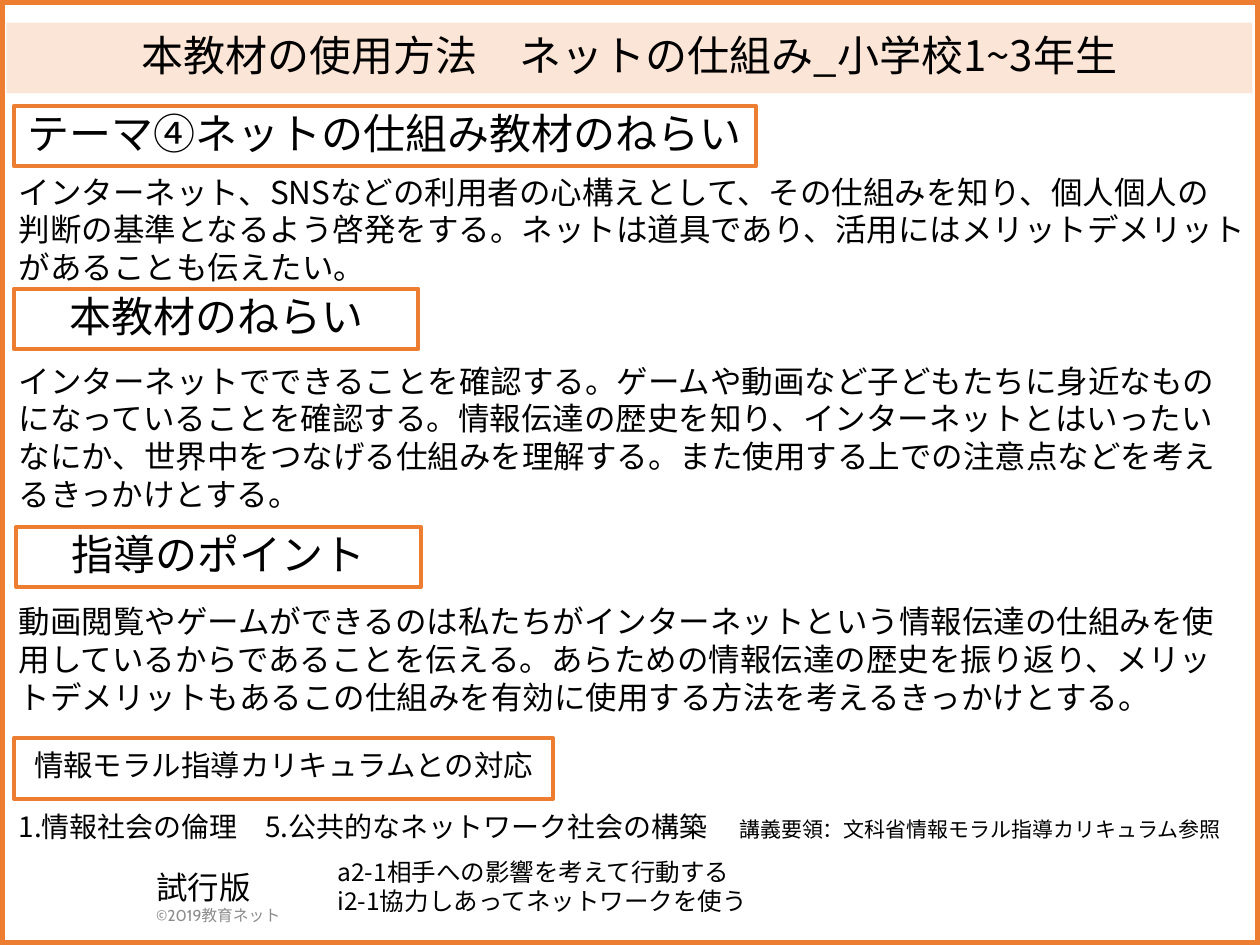
"""Build the lesson guide slide on how the internet works for grades 1 to 3."""
from typing import NamedTuple

from lxml import etree
from pptx import Presentation
from pptx import util as u
from pptx.dml.color import RGBColor
from pptx.enum import shapes, text
from pptx.oxml import ns

COLORS = {"accent": "ED7D31", "band": "FBE5D6", "ink": "000000", "credit": "8C8C8C"}
JAPANESE = "Noto Sans CJK JP"
LEFT = 0.05
HEADING_HEIGHT = 0.48


class Run(NamedTuple):
    """A stretch of text in one format."""
    words: str
    size: float = 18
    color: str = "ink"
    font: str = JAPANESE


class Heading(NamedTuple):
    """An outlined section heading."""
    words: str
    left: float
    top: float
    width: float
    size: float = 24
    spacing: float = 0.9


class Passage(NamedTuple):
    """A text box holding paragraphs of runs."""
    left: float
    top: float
    width: float
    height: float
    paragraphs: list[list[Run]]
    wrap: bool = True


HEADINGS = [
    Heading("テーマ④ネットの仕組み教材のねらい", 0.11, 0.84, 5.89),
    Heading("本教材のねらい", 0.11, 2.29, 3.21),
    Heading("指導のポイント", 0.13, 4.18, 3.21),
    Heading("情報モラル指導カリキュラムとの対応", 0.11, 5.86, 4.28, 16.8, 0.7),
]

PASSAGES = [
    Passage(1.14, 6.84, 2.89, 0.57, [
        [Run("試行版", font="Cabin")],
        [Run("©2019教育ネット", 9, "credit", "Cabin")],
    ]),
    Passage(LEFT, 1.32, 10.05, 1.01, [
        [Run("インターネット、SNSなどの利用者の心構えとして、その仕組みを知り、個人個人の")],
        [Run("判断の基準となるよう啓発をする。ネットは道具であり、活用にはメリットデメリット")],
        [Run("があることも伝えたい。")],
    ], wrap=False),
    Passage(LEFT, 2.82, 9.75, 1.31, [[Run(
        "インターネットでできることを確認する。ゲームや動画など子どもたちに身近なもの"
        "になっていることを確認する。情報伝達の歴史を知り、インターネットとはいったい"
        "なにか、世界中をつなげる仕組みを理解する。また使用する上での注意点などを考え"
        "るきっかけとする。")]]),
    Passage(LEFT, 4.73, 9.89, 1.01, [[Run(
        "動画閲覧やゲームができるのは私たちがインターネットという情報伝達の仕組みを使"
        "用しているからであることを伝える。あらための情報伝達の歴史を振り返り、メリッ"
        "トデメリットもあるこの仕組みを有効に使用する方法を考えるきっかけとする。")]]),
    Passage(2.58, 6.75, 9.57, 0.57, [
        [Run("a2-1相手への影響を考えて行動する", 14)],
        [Run("i2-1協力しあってネットワークを使う", 14)],
    ]),
    Passage(LEFT, 6.35, 10.47, 0.4, [[
        Run("1.情報社会の倫理\u30005.公共的なネットワーク社会の構築".replace("\u3000", "　"), 16),
        Run("　"),
        Run("講義要領：文科省情報モラル指導カリキュラム参照", 12),
    ]]),
]


def rgb(name: str) -> RGBColor:
    """Look up a palette colour."""
    return RGBColor.from_string(COLORS[name])


def apply(target, values: dict) -> None:
    """Set each format value on the target."""
    for key, value in values.items():
        setattr(target, key, value)


def add_run(paragraph, part: Run) -> None:
    """Append a formatted run, with its East Asian font, to a paragraph."""
    run = paragraph.add_run()
    run.text = part.words
    apply(run.font, {"name": part.font, "size": u.Pt(part.size), "bold": False})
    run.font.color.rgb = rgb(part.color)
    east_asian = etree.Element(ns.qn("a:ea"), typeface=JAPANESE)
    run.font._element.find(ns.qn("a:latin")).addnext(east_asian)


def write_heading(frame, part: Run, spacing: float) -> None:
    """Write one centred line in the middle of a shape."""
    apply(frame, {"word_wrap": True, "auto_size": text.MSO_AUTO_SIZE.NONE,
                  "vertical_anchor": text.MSO_ANCHOR.MIDDLE})
    paragraph = frame.paragraphs[0]
    apply(paragraph, {"alignment": text.PP_ALIGN.CENTER, "line_spacing": spacing})
    add_run(paragraph, part)


def add_outline(slide, left: float, top: float, width: float, height: float, weight: float):
    """Add an unfilled rectangle with an accent outline."""
    box = slide.shapes.add_shape(
        shapes.MSO_SHAPE.RECTANGLE, *map(u.Inches, (left, top, width, height)))
    box.shadow.inherit = False
    box.fill.background()
    box.line.color.rgb = rgb("accent")
    box.line.width = u.Pt(weight)
    return box


def add_heading(slide, heading: Heading) -> None:
    """Add an outlined section heading."""
    box = add_outline(slide, heading.left, heading.top, heading.width, HEADING_HEIGHT, 2.25)
    write_heading(box.text_frame, Run(heading.words, heading.size), heading.spacing)


def add_passage(slide, passage: Passage) -> None:
    """Add a text box with its paragraphs."""
    frame = slide.shapes.add_textbox(*map(u.Inches, passage[:4])).text_frame
    apply(frame, {"word_wrap": passage.wrap,
                  "auto_size": text.MSO_AUTO_SIZE.SHAPE_TO_FIT_TEXT})
    for index, runs in enumerate(passage.paragraphs):
        paragraph = frame.add_paragraph() if index else frame.paragraphs[0]
        for part in runs:
            add_run(paragraph, part)


def format_title(title) -> None:
    """Place, fill and write the title band."""
    apply(title, {"left": u.Inches(LEFT), "top": u.Inches(0.18),
                  "width": u.Inches(9.89), "height": u.Inches(0.56)})
    title.fill.solid()
    title.fill.fore_color.rgb = rgb("band")
    write_heading(title.text_frame, Run("本教材の使用方法　ネットの仕組み_小学校1~3年生", 24), 0.9)


def main() -> None:
    """Build and save the slide."""
    deck = Presentation()
    apply(deck, {"slide_width": u.Inches(10), "slide_height": u.Inches(7.5)})
    slide = deck.slides.add_slide(deck.slide_layouts[5])
    format_title(slide.shapes.title)
    add_outline(slide, 0, 0, 10, 7.5, 6)
    for heading in HEADINGS:
        add_heading(slide, heading)
    for passage in PASSAGES:
        add_passage(slide, passage)
    deck.save("out.pptx")


if __name__ == "__main__":
    main()
